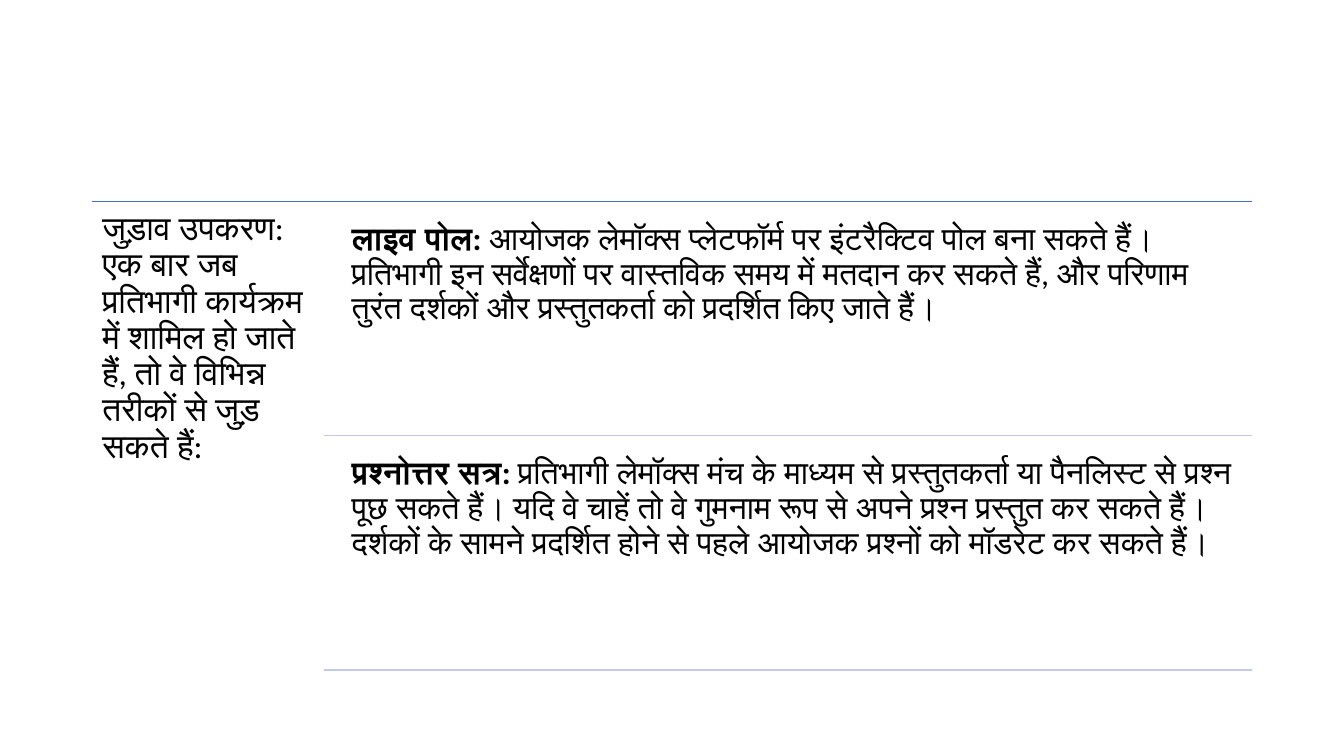
from dataclasses import dataclass

from lxml import etree
from pptx import Presentation
from pptx.dml.color import RGBColor
from pptx.enum.shapes import MSO_CONNECTOR
from pptx.enum.text import MSO_ANCHOR, PP_ALIGN
from pptx.oxml.ns import qn
from pptx.util import Cm, Pt

STRAIGHT = MSO_CONNECTOR.STRAIGHT
TOP = MSO_ANCHOR.TOP
LEFT = PP_ALIGN.LEFT


@dataclass(frozen=True)
class Theme:
    font: str = "Calibri"
    text: RGBColor = RGBColor(0x00, 0x00, 0x00)
    main_rule: RGBColor = RGBColor(0x44, 0x72, 0xC4)
    row_rule: RGBColor = RGBColor(0xC1, 0xC9, 0xE4)
    heading_size: int = 24
    body_size: int = 23
    rule_width: int = 1
    line_spacing: float = 0.9
    inset: float = 0.25


class SlideBuilder:
    def __init__(self, slide, theme):
        self.slide = slide
        self.theme = theme

    def rule(self, left, right, top, color):
        """Draw a horizontal line; positions are in centimetres."""
        connector = self.slide.shapes.add_connector(
            STRAIGHT, Cm(left), Cm(top), Cm(right), Cm(top))
        connector.line.color.rgb = color
        connector.line.width = Pt(self.theme.rule_width)
        properties = connector._element.spPr
        etree.SubElement(properties, qn("a:effectLst"))

    def text(self, left, top, width, height, size, runs):
        """Add one paragraph made of (text, bold) runs; lengths in centimetres."""
        box = self.slide.shapes.add_textbox(
            Cm(left), Cm(top), Cm(width), Cm(height))
        frame = box.text_frame
        frame.word_wrap = True
        frame.vertical_anchor = TOP
        frame.margin_left = frame.margin_right = Cm(self.theme.inset)
        frame.margin_top = frame.margin_bottom = Cm(self.theme.inset)
        paragraph = frame.paragraphs[0]
        paragraph.alignment = LEFT
        paragraph.line_spacing = self.theme.line_spacing
        for content, bold in runs:
            run = paragraph.add_run()
            run.text = content
            run.font.name = self.theme.font
            run.font.size = Pt(size)
            run.font.bold = bold
            run.font.color.rgb = self.theme.text


HEADING = ("जुड़ाव उपकरण: एक बार जब प्रतिभागी कार्यक्रम में शामिल हो जाते हैं, "
           "तो वे विभिन्न तरीकों से जुड़ सकते हैं:")
TOOLS = [
    ("लाइव पोल: ",
     "आयोजक लेमॉक्स प्लेटफॉर्म पर इंटरैक्टिव पोल बना सकते हैं। "
     "प्रतिभागी इन सर्वेक्षणों पर वास्तविक समय में मतदान कर सकते हैं, "
     "और परिणाम तुरंत दर्शकों और प्रस्तुतकर्ता को प्रदर्शित किए जाते हैं।"),
    ("प्रश्नोत्तर सत्र: ",
     "प्रतिभागी लेमॉक्स मंच के माध्यम से प्रस्तुतकर्ता या पैनलिस्ट से प्रश्न पूछ सकते हैं। "
     "यदि वे चाहें तो वे गुमनाम रूप से अपने प्रश्न प्रस्तुत कर सकते हैं। "
     "दर्शकों के सामने प्रदर्शित होने से पहले आयोजक प्रश्नों को मॉडरेट कर सकते हैं।"),
]

LIST_LEFT, LIST_RIGHT, LIST_TOP = 2.33, 31.54, 5.08
HEADING_WIDTH, HEADING_HEIGHT = 5.84, 12.1
ROW_PITCH, ROW_GAP = 5.9, 0.28
ROW_LEFT = LIST_LEFT + HEADING_WIDTH
TOOL_LEFT = 8.61


def main():
    presentation = Presentation()
    presentation.slide_width = Cm(33.87)
    presentation.slide_height = Cm(19.05)
    slide = presentation.slides.add_slide(presentation.slide_layouts[6])
    theme = Theme()
    builder = SlideBuilder(slide, theme)

    builder.rule(LIST_LEFT, LIST_RIGHT, LIST_TOP, theme.main_rule)
    builder.text(LIST_LEFT, LIST_TOP, HEADING_WIDTH, HEADING_HEIGHT,
                 theme.heading_size, [(HEADING, False)])
    for index, (name, description) in enumerate(TOOLS):
        row_top = LIST_TOP + index * ROW_PITCH
        builder.text(TOOL_LEFT, row_top + ROW_GAP, LIST_RIGHT - TOOL_LEFT,
                     ROW_PITCH - ROW_GAP, theme.body_size,
                     [(name, True), (description, False)])
        builder.rule(ROW_LEFT, LIST_RIGHT, row_top + ROW_PITCH, theme.row_rule)

    presentation.save("out.pptx")


if __name__ == "__main__":
    main()
